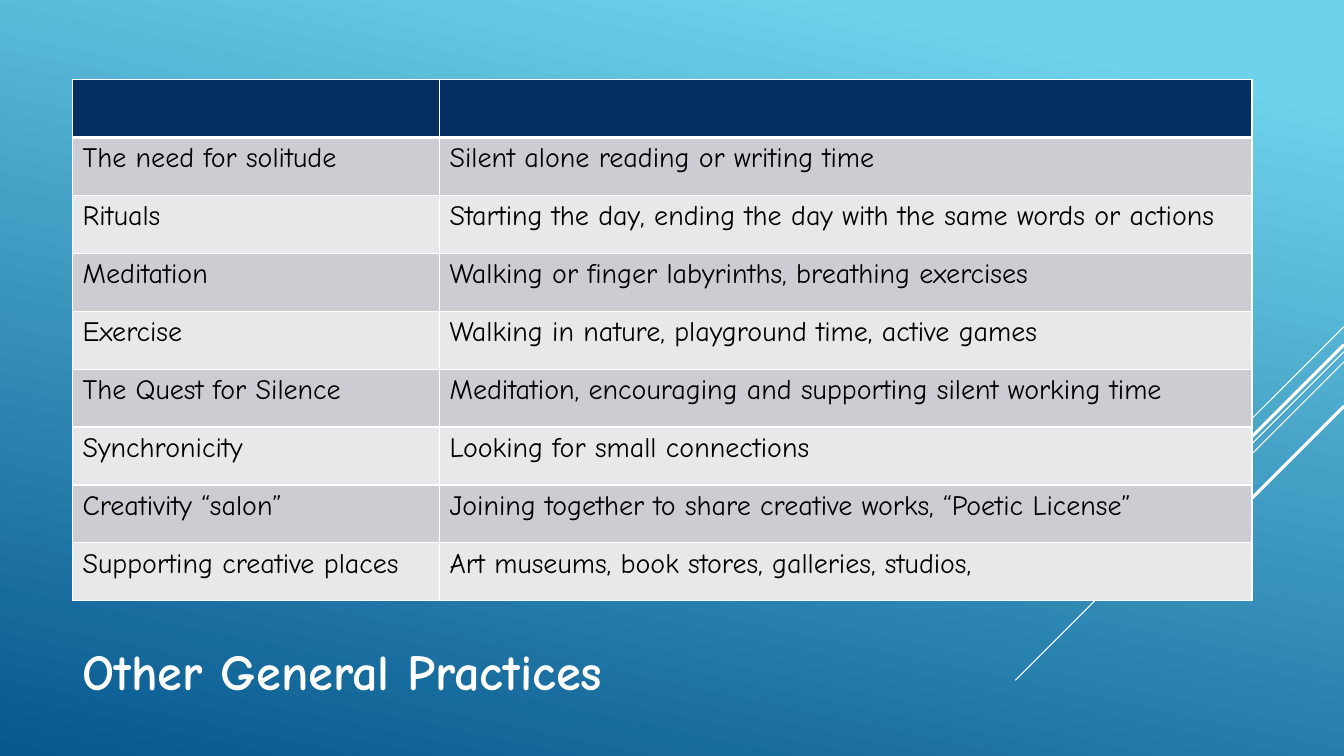
from dataclasses import dataclass

from lxml import etree
from pptx import Presentation
from pptx.dml.color import RGBColor
from pptx.enum.shapes import MSO_CONNECTOR
from pptx.enum.text import MSO_ANCHOR, MSO_AUTO_SIZE, PP_ALIGN
from pptx.oxml.ns import qn
from pptx.util import Inches, Pt

LINE = MSO_CONNECTOR.STRAIGHT
MIDDLE = MSO_ANCHOR.MIDDLE
FIXED = MSO_AUTO_SIZE.NONE
LEFT = PP_ALIGN.LEFT

WIDTH, HEIGHT = Inches(13.33), Inches(7.5)
FONT = "Comic Neue"
COLORS = {
    "sky": "6ED2EB",
    "sea": "06588E",
    "navy": "052F61",
    "dark": "CCCDD2",
    "light": "E7E8EA",
    "white": "FFFFFF",
    "black": "000000",
}
ROWS = [
    ("", ""),
    ("The need for solitude", "Silent alone reading or writing time"),
    ("Rituals", "Starting the day, ending the day with the same words or actions"),
    ("Meditation", "Walking or finger labyrinths, breathing exercises"),
    ("Exercise", "Walking in nature, playground time, active games"),
    ("The Quest for Silence", "Meditation, encouraging and supporting silent working time"),
    ("Synchronicity", "Looking for small connections"),
    ("Creativity “salon”", "Joining together to share creative works, “Poetic License”"),
    ("Supporting creative places", "Art museums, book stores, galleries, studios,"),
]


@dataclass
class Ray:
    """A diagonal from the right edge: top in % of height, reach in % of width."""
    top: float
    reach: float
    weight: float = 0.75


RAYS = [
    Ray(43.2, 7.5),
    Ray(46.53, 24.45),
    Ray(47.87, 15.53),
    Ray(45.6, 14.33, 2.25),
    Ray(53.73, 10.43, 2.25),
]


def wide(share: float) -> int:
    """Percent of the slide's width."""
    return round(WIDTH * share / 100)


def tall(share: float) -> int:
    """Percent of the slide's height."""
    return round(HEIGHT * share / 100)


def color(name: str) -> RGBColor:
    return RGBColor.from_string(COLORS[name])


def write(frame, text: str, *, size: float, ink: str, bold: bool = False) -> None:
    para = frame.paragraphs[0]
    para.alignment = LEFT
    run = para.add_run()
    run.text = text
    run.font.name = FONT
    run.font.size = Pt(size)
    run.font.bold = bold
    run.font.color.rgb = color(ink)


def paint_back(slide) -> None:
    fill = slide.background.fill
    fill.gradient()
    fill.gradient_angle = 258
    for stop, (place, name) in zip(fill.gradient_stops, [(0.1, "sky"), (1, "sea")]):
        stop.position = place
        stop.color.rgb = color(name)


def draw_ray(slide, ray: Ray) -> None:
    top, reach = tall(ray.top), wide(ray.reach)
    line = slide.shapes.add_connector(LINE, WIDTH, top, WIDTH - reach, top + reach)
    line.line.color.rgb = color("white")
    line.line.width = Pt(ray.weight)
    etree.SubElement(line._element.spPr, qn("a:effectLst"))


def edge_cell(cell, **widths: float) -> None:
    """Add white borders, given in points by side; call before filling."""
    props = cell._tc.get_or_add_tcPr()
    for side in "LRTB":
        edge = etree.SubElement(props, qn(f"a:ln{side}"), w=str(Pt(widths.get(side, 1))))
        fill = etree.SubElement(edge, qn("a:solidFill"))
        etree.SubElement(fill, qn("a:srgbClr"), val=COLORS["white"])


def draw_table(slide) -> None:
    cols = [wide(27.3), wide(60.45)]
    high = tall(68.93)
    table = slide.shapes.add_table(
        len(ROWS), len(cols), wide(5.4), tall(10.53), sum(cols), high
    ).table
    for col, width in zip(table.columns, cols):
        col.width = width
    for i, texts in enumerate(ROWS):
        table.rows[i].height = high // len(ROWS)
        shade = "navy" if i == 0 else "dark" if i % 2 else "light"
        edges = {"B": 3} if i == 0 else {"T": 3} if i == 1 else {}
        for j, text in enumerate(texts):
            cell = table.cell(i, j)
            edge_cell(cell, **edges)
            cell.fill.solid()
            cell.fill.fore_color.rgb = color(shade)
            if text:
                write(cell.text_frame, text, size=20, ink="black")


def set_title(slide) -> None:
    title = slide.shapes.title
    title.left, title.top = wide(5.4), tall(83.07)
    title.width, title.height = wide(70), tall(11.07)
    frame = title.text_frame
    frame.word_wrap = True
    frame.auto_size = FIXED
    frame.vertical_anchor = MIDDLE
    write(frame, "Other General Practices", size=36, ink="white", bold=True)


def main() -> None:
    deck = Presentation()
    deck.slide_width, deck.slide_height = WIDTH, HEIGHT
    slide = deck.slides.add_slide(deck.slide_layouts[5])
    paint_back(slide)
    for ray in RAYS:
        draw_ray(slide, ray)
    set_title(slide)
    draw_table(slide)
    deck.save("out.pptx")


if __name__ == "__main__":
    main()
